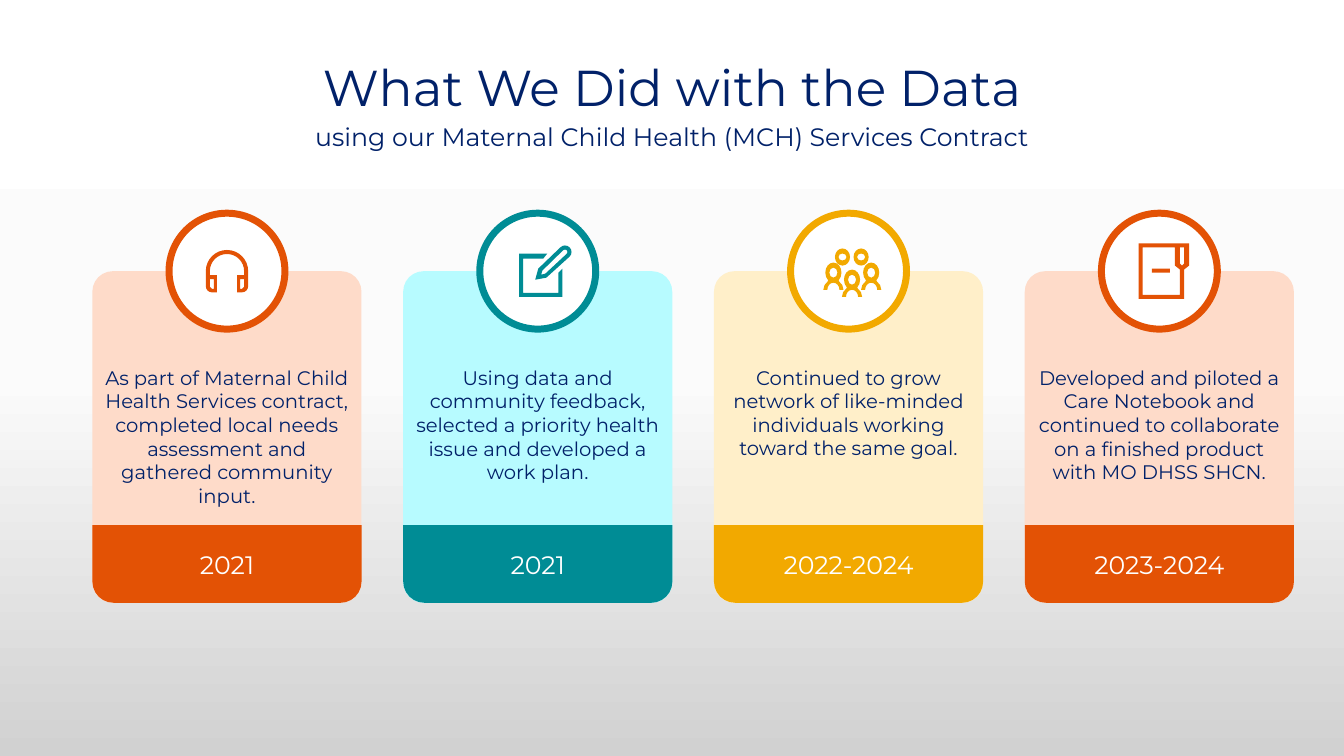
from copy import deepcopy
from math import cos, radians, sin, tan

from pptx import Presentation
from pptx.dml.color import RGBColor
from pptx.enum.shapes import MSO_SHAPE
from pptx.enum.text import MSO_ANCHOR, MSO_AUTO_SIZE, PP_ALIGN
from pptx.oxml.ns import qn
from pptx.util import Inches, Pt

ROUNDED = MSO_SHAPE.ROUNDED_RECTANGLE
TWO_ROUNDED = MSO_SHAPE.ROUND_2_SAME_RECTANGLE
OVAL = MSO_SHAPE.OVAL
CENTER = PP_ALIGN.CENTER
MIDDLE, TOP = MSO_ANCHOR.MIDDLE, MSO_ANCHOR.TOP
GROW = MSO_AUTO_SIZE.SHAPE_TO_FIT_TEXT

FONT = "Montserrat"
COLORS = {
    "navy": "012169", "white": "FFFFFF",
    "orange": "E35205", "peach": "FEDBC9",
    "teal": "008C95", "aqua": "B7FBFF",
    "gold": "F2A900", "cream": "FFEFC9",
    "mist": "FBFBFB", "gray": "D1D1D1",
}
BACKDROP = [(0, "white"), (0.5, "mist"), (1, "gray")]

WIDTH, HEIGHT = 40 / 3, 7.5
CARD_LEFT, CARD_TOP = 11 / 12, 2.69
CARD_WIDTH, CARD_HEIGHT = 2.67, 3.29
CARD_PITCH = 37 / 12
BAND_HEIGHT, BADGE_SIZE = 0.77, 1.15


def rgb(name):
    return RGBColor.from_string(COLORS[name])


def arc(x, y, across, down, start, end):
    low, high = min(start, end), max(start, end)
    cuts = [low] + [a for a in range(-180, 451, 90) if low < a < high] + [high]
    if end < start:
        cuts.reverse()
    steps = [(x + across * cos(radians(cuts[0])), y + down * sin(radians(cuts[0])))]
    for first, last in zip(cuts, cuts[1:]):
        a, b = radians(first), radians(last)
        pull = 4 / 3 * tan((b - a) / 4)
        steps.append((
            x + across * (cos(a) - pull * sin(a)), y + down * (sin(a) + pull * cos(a)),
            x + across * (cos(b) + pull * sin(b)), y + down * (sin(b) - pull * cos(b)),
            x + across * cos(b), y + down * sin(b)))
    return steps


def ring(x, y):
    return [arc(x, y, 7.5, 8.5, 0, 360), arc(x, y, 4, 3.5, 0, 360)]


def person(x, y):
    shoulder = y + 17
    outline = (arc(x, y, 8, 10, 130, 410)
               + arc(x, shoulder, 10, 10, -55, 0)
               + arc(x, shoulder, 6, 7, 0, -180)
               + arc(x, shoulder, 10, 10, 180, 235))
    return [outline, arc(x, y, 4, 5, 0, 360)]


def headphones():
    band = (arc(0, 0, 21, 21, 180, 360) + arc(15, 15, 6, 6, 0, 90)
            + [(10, 21), (10, 4), (17, 4)]
            + arc(0, 0, 17, 17, 360, 180)
            + [(-17, 4), (-10, 4), (-10, 21)] + arc(-15, 15, 6, 6, 90, 180))
    cushion = [(17, 8), (13, 8), (13, 17.5), (15, 17.5), (17, 15.5)]
    return [band, cushion, [(-x, y) for x, y in cushion]]


def pencil():
    sheet = [(-18.5, -17.5), (-18.5, 25.5), (24.5, 25.5), (24.5, -2.5),
             (20.5, 1.5), (20.5, 21.5), (-14.5, 21.5), (-14.5, -12.5),
             (5.5, -12.5), (9.5, -17.5)]
    body = [(0.5, -2.5), (-2.5, 8.5), (8.5, 6.5)] + arc(27, -19, 6.5, 6.5, 45, -135)
    core = [(3.5, 3.5), (7.5, 2.5)] + arc(27, -19, 2.5, 2.5, 45, -135) + [(4.5, -0.5)]
    return [sheet, body, core]


def people():
    return (ring(-6, -14) + ring(12.5, -14)
            + person(-15, 1.5) + person(22.5, 1.5) + person(3.5, 8.5))


def notebook():
    cover = [(-20.5, -27.5), (29.5, -27.5), (29.5, -5.5), (24.5, -1.5),
             (24.5, 27.5), (-20.5, 27.5)]
    leaf = [(-16.5, -23.5), (15.5, -23.5), (15.5, -5.5), (20.5, -1.5),
            (20.5, 23.5), (-16.5, 23.5)]
    ribbon = [(20.5, -23.5), (24.5, -23.5), (24.5, -7.5), (22.5, -5.5), (20.5, -7.5)]
    label = [(-7.5, -2.5), (10.5, -2.5), (10.5, 1.5), (-7.5, 1.5)]
    return [cover, leaf, ribbon, label]


CARDS = [
    ("2021", "As part of Maternal Child Health Services contract, completed local "
     "needs assessment and gathered community input.", 6, "orange", "peach", headphones),
    ("2021", "Using data and community feedback, selected a priority health issue "
     "and developed a work plan.", 5, "teal", "aqua", pencil),
    ("2022-2024", "Continued to grow network of like-minded individuals working "
     "toward the same goal.", 4, "gold", "cream", people),
    ("2023-2024", "Developed and piloted a Care Notebook and continued to collaborate "
     "on a finished product with MO DHSS SHCN.", 5, "orange", "peach", notebook),
]


def write(box, text, size, color="navy", anchor=TOP, wrap=True, spacing=None,
          inset=0.05, fit=MSO_AUTO_SIZE.NONE):
    frame = box.text_frame
    frame.word_wrap, frame.vertical_anchor, frame.auto_size = wrap, anchor, fit
    frame.margin_top = Inches(inset)
    para = frame.paragraphs[0]
    para.alignment = CENTER
    para.line_spacing = spacing
    span = para.add_run()
    span.text = text
    span.font.name, span.font.size = FONT, Pt(size)
    span.font.color.rgb = rgb(color)


def add_text(page, text, left, top, width, height, **style):
    box = page.shapes.add_textbox(
        Inches(left), Inches(top), Inches(width), Inches(height))
    write(box, text, **style)


def paint(shape, fill, line=None):
    shape.shadow.inherit = False
    shape.fill.solid()
    shape.fill.fore_color.rgb = rgb(fill)
    if line:
        shape.line.color.rgb = rgb(line)
        shape.line.width = Pt(5)
    else:
        shape.line.fill.background()


def add_shape(page, kind, left, top, width, height, fill, line=None, corners=()):
    shape = page.shapes.add_shape(
        kind, Inches(left), Inches(top), Inches(width), Inches(height))
    paint(shape, fill, line)
    for index, corner in enumerate(corners):
        shape.adjustments[index] = corner
    return shape


def bend(outline, contours):
    nodes = iter(list(outline))
    for contour in contours:
        next(nodes)
        for step in contour[1:]:
            node = next(nodes)
            if len(step) == 6:
                curve = outline.makeelement(qn("a:cubicBezTo"))
                outline.replace(node, curve)
                curve.append(node[0])
                for other in (next(nodes), next(nodes)):
                    curve.append(other[0])
                    outline.remove(other)
        next(nodes)


def add_icon(page, contours, center, middle, color):
    builder = None
    for contour in contours:
        points = [(Inches(center + step[i] / 100), Inches(middle + step[i + 1] / 100))
                  for step in contour for i in range(0, len(step), 2)]
        if builder is None:
            builder = page.shapes.build_freeform(*points[0])
        else:
            builder.move_to(*points[0])
        builder.add_line_segments(points[1:], close=True)
    icon = builder.convert_to_shape()
    bend(next(icon.element.iter(qn("a:path"))), contours)
    paint(icon, color)


def add_backdrop(page):
    fill = page.background.fill
    fill.gradient()
    fill.gradient_angle = 270
    stops = next(page.element.iter(qn("a:gsLst")))
    stops.append(deepcopy(stops[-1]))
    for stop, (position, color) in zip(fill.gradient_stops, BACKDROP):
        stop.position = position
        stop.color.rgb = rgb(color)


def add_heading(page):
    title = page.shapes.title
    title.left, title.top = Inches(CARD_LEFT), Inches(0.41)
    title.width, title.height = Inches(11.5), Inches(0.97)
    write(title, "What We Did with the Data", size=36, anchor=MIDDLE, spacing=0.9)
    add_text(page, "using our Maternal Child Health (MCH) Services Contract",
             WIDTH / 8, 1.15, WIDTH * 0.75, 0.48, size=18, spacing=0.9, inset=0.09)


def add_card(page, left, top, year, story, lines, strong, soft, icon):
    center = left + CARD_WIDTH / 2
    band_top = top + CARD_HEIGHT - BAND_HEIGHT
    add_shape(page, ROUNDED, left, top, CARD_WIDTH, CARD_HEIGHT, soft, corners=[0.076])
    band = add_shape(page, TWO_ROUNDED, left, band_top, CARD_WIDTH, BAND_HEIGHT,
                     strong, corners=[0.273, 0])
    band.rotation = 180
    add_shape(page, OVAL, center - BADGE_SIZE / 2, top - BADGE_SIZE / 2,
              BADGE_SIZE, BADGE_SIZE, "white", line=strong)
    add_icon(page, icon(), center, top, strong)
    add_text(page, story, left, top + 0.89, CARD_WIDTH, 0.1 + 0.235 * lines,
             size=14, fit=GROW)
    year_width = 0.14 + 0.16 * len(year)
    add_text(page, year, center - year_width / 2, band_top + 0.19, year_width, 0.4,
             size=18, color="white", wrap=False, fit=GROW)


def main():
    deck = Presentation()
    deck.slide_width, deck.slide_height = Inches(WIDTH), Inches(HEIGHT)
    page = deck.slides.add_slide(deck.slide_layouts[5])
    add_backdrop(page)
    add_heading(page)
    for column, card in enumerate(CARDS):
        add_card(page, CARD_LEFT + column * CARD_PITCH, CARD_TOP, *card)
    deck.save("out.pptx")


if __name__ == "__main__":
    main()
